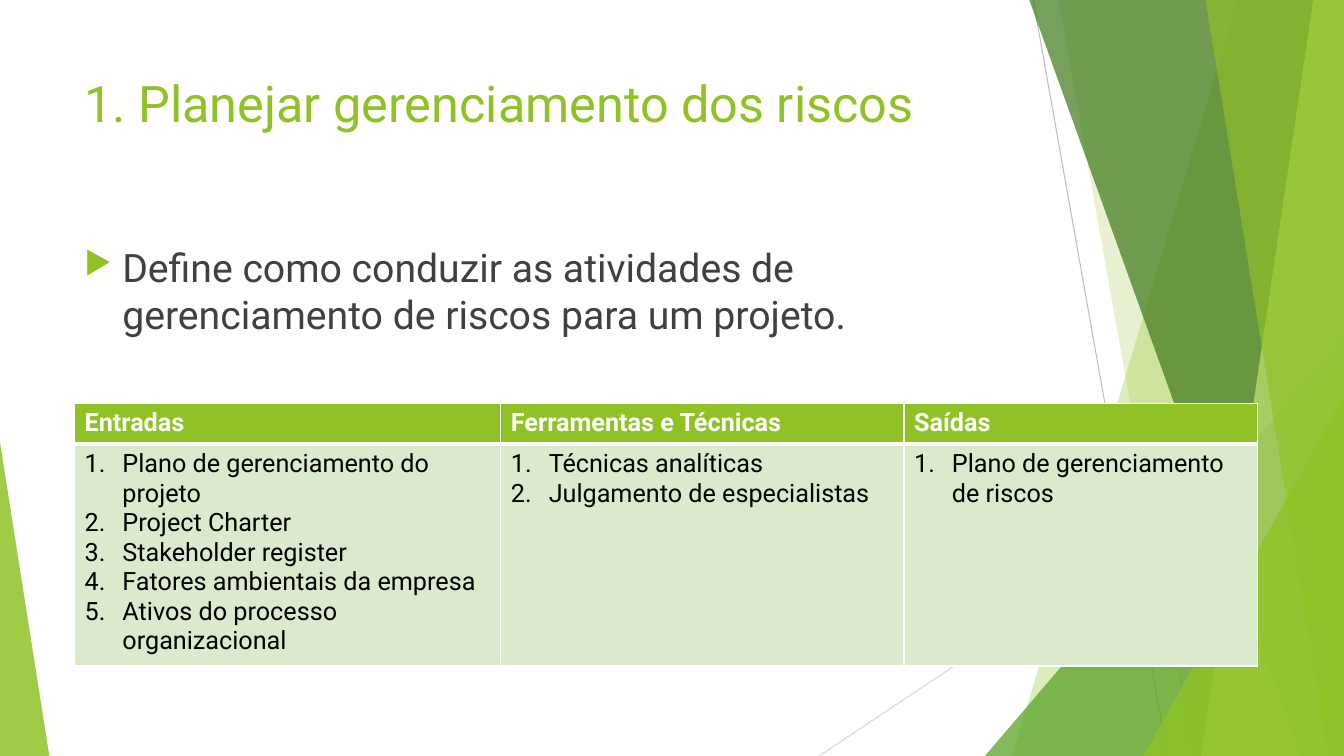
"""Build the slide on planning risk management."""
from dataclasses import dataclass

from lxml import etree
from pptx import Presentation
from pptx.dml.color import RGBColor
from pptx.enum.shapes import MSO_CONNECTOR, MSO_SHAPE
from pptx.oxml.ns import qn
from pptx.util import Pt

PX = 9525
WIDTH, HEIGHT = 1280, 720
STRAIGHT = MSO_CONNECTOR.STRAIGHT
TRIANGLE = MSO_SHAPE.ISOSCELES_TRIANGLE


@dataclass(frozen=True)
class Theme:
    font: str = "Roboto"
    green: str = "90C226"
    leaf: str = "54A021"
    forest: str = "3F7819"
    lime: str = "C0E474"
    pale: str = "DBE9CD"
    body: str = "404040"
    black: str = "000000"
    white: str = "FFFFFF"
    rule_dark: str = "BFBFBF"
    rule_light: str = "D9D9D9"
    title_size: int = 36
    body_size: int = 28
    table_size: int = 18


theme = Theme()


def style_paragraph(paragraph, text, size, color, bold=False):
    paragraph.text = text
    font = paragraph.font
    font.name, font.size, font.bold = theme.font, Pt(size), bold
    font.color.rgb = RGBColor.from_string(color)


def add_bullet(paragraph, *elements):
    properties = paragraph._p.get_or_add_pPr()
    properties.set("marL", str(36 * PX))
    properties.set("indent", str(-36 * PX))
    for tag, attributes in elements:
        etree.SubElement(properties, qn(tag), attributes)
    return properties


presentation = Presentation()
presentation.slide_width, presentation.slide_height = WIDTH * PX, HEIGHT * PX
slide = presentation.slides.add_slide(presentation.slide_layouts[6])
shapes = slide.shapes

rules = [
    (984, 0, 1112, HEIGHT, theme.rule_dark),
    (WIDTH, 387, 780, HEIGHT, theme.rule_light),
]
for *ends, color in rules:
    rule = shapes.add_connector(STRAIGHT, *(value * PX for value in ends))
    rule.line.color.rgb = RGBColor.from_string(color)
    rule.line.width = Pt(0.75)
    etree.SubElement(rule._element.spPr, qn("a:effectLst"))

# Bands give top and bottom x; triangles give left, top, width, height, apex.
facets = [
    ((1179, 964), theme.green, 30),
    ((1008, 1136), theme.green, 20),
    ((938, 320, 342, 400, 1), theme.leaf, 72),
    ((980, 1239), theme.forest, 70),
    ((1251, 1144), theme.lime, 70),
    ((1148, 1265), theme.green, 65),
    ((1089, 377, 191, 343, 1), theme.green, 80),
    ((0, 421, 47, 299, 0), theme.green, 85),
]
for geometry, color, opacity in facets:
    if len(geometry) == 2:
        top_x, bottom_x = geometry
        builder = shapes.build_freeform(top_x, -1, scale=PX)
        builder.add_line_segments([(WIDTH, -1), (WIDTH, HEIGHT), (bottom_x, HEIGHT)])
        facet = builder.convert_to_shape()
    else:
        *box, apex = geometry
        facet = shapes.add_shape(TRIANGLE, *(value * PX for value in box))
        facet.adjustments[0] = apex
    facet.shadow.inherit = False
    facet.line.fill.background()
    facet.fill.solid()
    facet.fill.fore_color.rgb = RGBColor.from_string(color)
    fill_color = facet._element.spPr.find(qn("a:solidFill"))[0]
    etree.SubElement(fill_color, qn("a:alpha"), val=str(opacity * 1000))

title = shapes.add_textbox(71 * PX, 64 * PX, 902 * PX, 138 * PX)
title.text_frame.word_wrap = True
style_paragraph(title.text_frame.paragraphs[0], "1. Planejar gerenciamento dos riscos",
                theme.title_size, theme.green)

definition = shapes.add_textbox(71 * PX, 227 * PX, 902 * PX, 407 * PX)
definition.text_frame.word_wrap = True
paragraph = definition.text_frame.paragraphs[0]
properties = add_bullet(paragraph, ("a:buClr", {}), ("a:buSzPct", {"val": "80000"}),
                        ("a:buChar", {"char": "▶"}))
etree.SubElement(properties.find(qn("a:buClr")), qn("a:srgbClr"), val=theme.green)
style_paragraph(paragraph,
                "Define como conduzir as atividades de gerenciamento de riscos para um projeto.",
                theme.body_size, theme.body)

columns = [
    ("Entradas", 406, [
        "Plano de gerenciamento do projeto",
        "Project Charter",
        "Stakeholder register",
        "Fatores ambientais da empresa",
        "Ativos do processo organizacional",
    ]),
    ("Ferramentas e Técnicas", 384, ["Técnicas analíticas", "Julgamento de especialistas"]),
    ("Saídas", 337, ["Plano de gerenciamento de riscos"]),
]
row_heights = [39, 206]
table_width = sum(width for _, width, _ in columns)
table = shapes.add_table(2, len(columns), 71 * PX, 384 * PX,
                         table_width * PX, sum(row_heights) * PX).table
for row, height in zip(table.rows, row_heights):
    row.height = height * PX

for index, (heading, width, items) in enumerate(columns):
    table.columns[index].width = width * PX
    header, content = table.cell(0, index), table.cell(1, index)
    style_paragraph(header.text_frame.paragraphs[0], heading,
                    theme.table_size, theme.white, bold=True)
    for number, item in enumerate(items):
        frame = content.text_frame
        paragraph = frame.add_paragraph() if number else frame.paragraphs[0]
        add_bullet(paragraph, ("a:buFont", {"typeface": "+mj-lt"}),
                   ("a:buAutoNum", {"type": "arabicPeriod"}))
        style_paragraph(paragraph, item, theme.table_size, theme.black)
    for cell, color, thick_side in ((header, theme.green, "B"), (content, theme.pale, "T")):
        cell_properties = cell._tc.get_or_add_tcPr()
        for side in "LRTB":
            points = 3 if side == thick_side else 1
            border = etree.SubElement(cell_properties, qn(f"a:ln{side}"), w=str(Pt(points)))
            border_fill = etree.SubElement(border, qn("a:solidFill"))
            etree.SubElement(border_fill, qn("a:srgbClr"), val=theme.white)
        cell.fill.solid()
        cell.fill.fore_color.rgb = RGBColor.from_string(color)

presentation.save("out.pptx")
